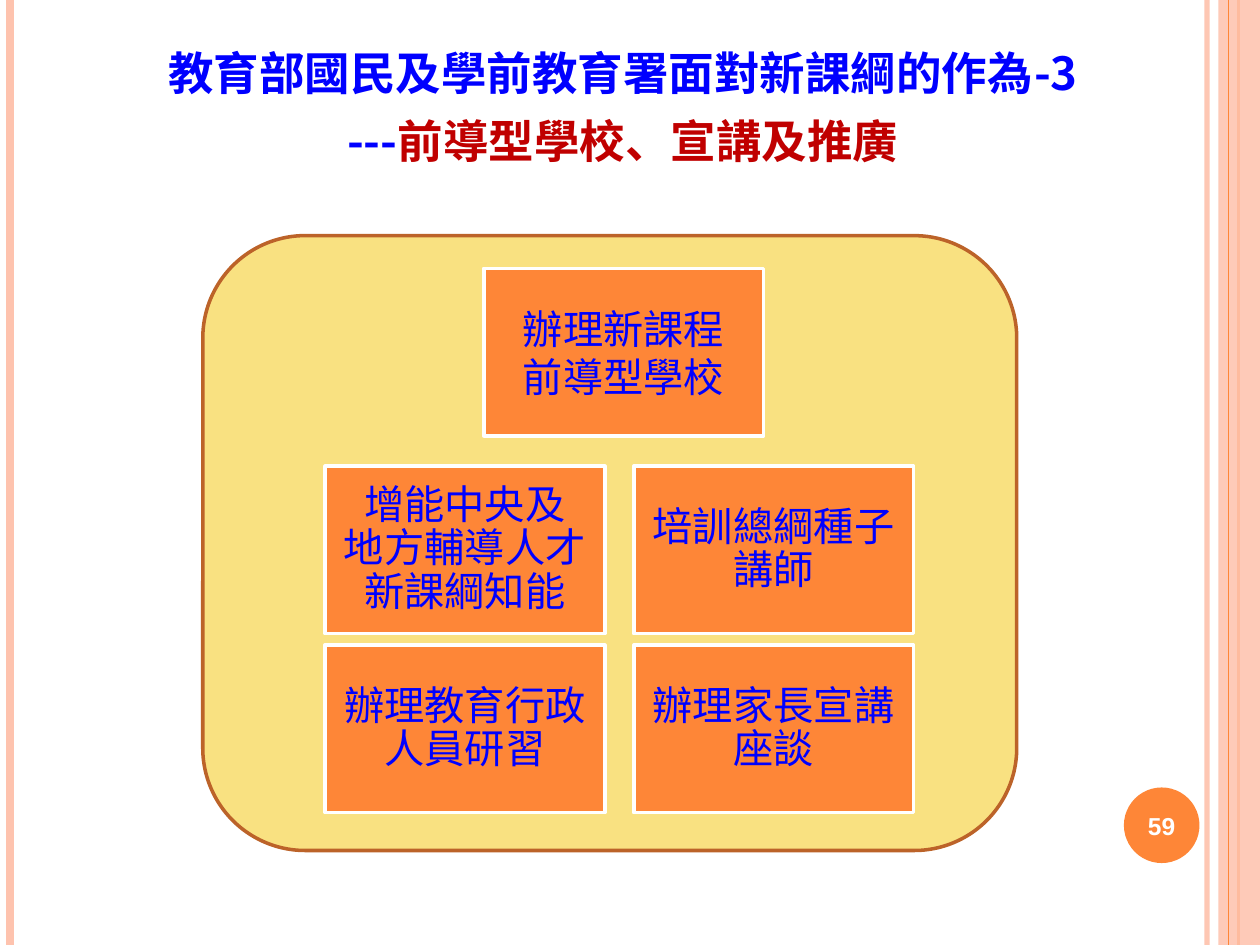
import pptx
import pptx.util
import pptx.dml.color
import pptx.enum.shapes
import pptx.enum.text
import pptx.oxml.ns
from dataclasses import dataclass
from lxml import etree

Inches = pptx.util.Inches
Pt = pptx.util.Pt
Shapes = pptx.enum.shapes.MSO_SHAPE
qn = pptx.oxml.ns.qn

WIDTH, HEIGHT = 10, 7.5
CJK = "Noto Sans CJK SC"
ORANGE, PINK, BLUE, RED, WHITE = "FE8637", "FEC3AE", "0000FF", "C00000", "FFFFFF"

# Grid of task boxes
COLUMNS = {"left": 2.58, "middle": 3.84, "right": 5.03}
ROWS = (2.13, 3.7, 5.12)
BOX_WIDTH, BOX_HEIGHT = 2.22, 1.33


@dataclass
class Rule:
    x: float
    weight: float
    color: str
    opacity: int = 100


@dataclass
class Task:
    column: str
    row: int
    lines: tuple[str, ...]
    spacing: float = 0.9


LEFT_RULES = (Rule(9.58, 3, PINK, 93), Rule(0.08, 4.5, PINK), Rule(9.83, 1.5, ORANGE))
EDGE_RULE = Rule(9.75, 0.75, ORANGE)
TASKS = (
    Task("left", 1, ("增能中央及", "地方輔導人才", "新課綱知能")),
    Task("right", 1, ("培訓總綱種子講師",)),
    Task("left", 2, ("辦理教育行政人員研習",)),
    Task("right", 2, ("辦理家長宣講座談",)),
    Task("middle", 0, ("辦理新課程", "前導型學校"), 1.0),
)


def rgb(color: str):
    return pptx.dml.color.RGBColor.from_string(color)


def set_opacity(fill, percent: int) -> None:
    """Give the solid fill inside an element an opacity."""
    color = fill.find(".//" + qn("a:srgbClr"))
    etree.SubElement(color, qn("a:alpha"), val=str(percent * 1000))


def style_font(font, face: str, size: float, color: str, bold: bool = False) -> None:
    font.name, font.size, font.bold = face, Pt(size), bold
    font.color.rgb = rgb(color)
    latin = font._element.find(qn("a:latin"))
    latin.addnext(etree.Element(qn("a:ea"), typeface=face))


def draw_rule(page, rule: Rule) -> None:
    line = page.shapes.add_connector(
        pptx.enum.shapes.MSO_CONNECTOR.STRAIGHT,
        Inches(rule.x), 0, Inches(rule.x), Inches(HEIGHT))
    line.line.color.rgb = rgb(rule.color)
    line.line.width = Pt(rule.weight)
    properties = line._element.spPr
    if rule.opacity < 100:
        set_opacity(properties, rule.opacity)
    etree.SubElement(properties, qn("a:effectLst"))


def draw_shape(page, kind, left: float, top: float, width: float, height: float,
               fill: str, line: str | None = None):
    shape = page.shapes.add_shape(
        kind, Inches(left), Inches(top), Inches(width), Inches(height))
    shape.shadow.inherit = False
    shape.fill.solid()
    shape.fill.fore_color.rgb = rgb(fill)
    if line:
        shape.line.color.rgb = rgb(line)
        shape.line.width = Pt(2)
    else:
        shape.line.fill.background()
    return shape


def prepare_frame(shape, inset: float):
    frame = shape.text_frame
    frame.word_wrap = True
    frame.vertical_anchor = pptx.enum.text.MSO_ANCHOR.MIDDLE
    frame.margin_left = frame.margin_right = Inches(inset)
    frame.margin_top = frame.margin_bottom = Inches(inset)
    return frame


def draw_task(page, task: Task) -> None:
    box = draw_shape(page, Shapes.RECTANGLE, COLUMNS[task.column], ROWS[task.row],
                     BOX_WIDTH, BOX_HEIGHT, ORANGE, WHITE)
    frame = prepare_frame(box, 0.1)
    frame.text = "\n".join(task.lines)
    for para in frame.paragraphs:
        para.alignment = pptx.enum.text.PP_ALIGN.CENTER
        para.line_spacing = task.spacing
        style_font(para.font, CJK, 23, BLUE)


def draw_title(page) -> None:
    box = page.shapes.add_textbox(Inches(0.26), Inches(0.25), Inches(9.37), Inches(1.08))
    para = prepare_frame(box, 0).paragraphs[0]
    para.alignment = pptx.enum.text.PP_ALIGN.CENTER
    para.line_spacing = Pt(39)
    for text, color in (("教育部國民及學前教育署面對新課綱的作為-3\v---", BLUE),
                        ("前導型學校、宣講及推廣", RED)):
        for index, part in enumerate(text.split("\v")):
            if index:
                para.add_line_break()
            span = para.add_run()
            span.text = part
            style_font(span.font, CJK, 26, color, bold=True)


def draw_page_number(page) -> None:
    badge = draw_shape(page, Shapes.OVAL, 8.92, 6.25, 0.6, 0.6, ORANGE)
    para = prepare_frame(badge, 0).paragraphs[0]
    para.text = "59"
    para.alignment = pptx.enum.text.PP_ALIGN.CENTER
    style_font(para.font, "Arial", 14, WHITE, bold=True)


def main() -> None:
    deck = pptx.Presentation()
    deck.slide_width, deck.slide_height = Inches(WIDTH), Inches(HEIGHT)
    page = deck.slides.add_slide(deck.slide_layouts[6])

    # Side stripes
    for rule in LEFT_RULES:
        draw_rule(page, rule)
    band = draw_shape(page, Shapes.RECTANGLE, 9.67, 0, 0.33, HEIGHT, PINK)
    set_opacity(band._element.spPr, 87)
    draw_rule(page, EDGE_RULE)

    # Page number, title and panel of tasks
    draw_page_number(page)
    draw_shape(page, Shapes.ROUNDED_RECTANGLE, 1.61, 1.87, 6.46, 4.88, "F9E181", "BC6329")
    draw_title(page)
    for task in TASKS:
        draw_task(page, task)
    deck.save("out.pptx")


if __name__ == "__main__":
    main()
